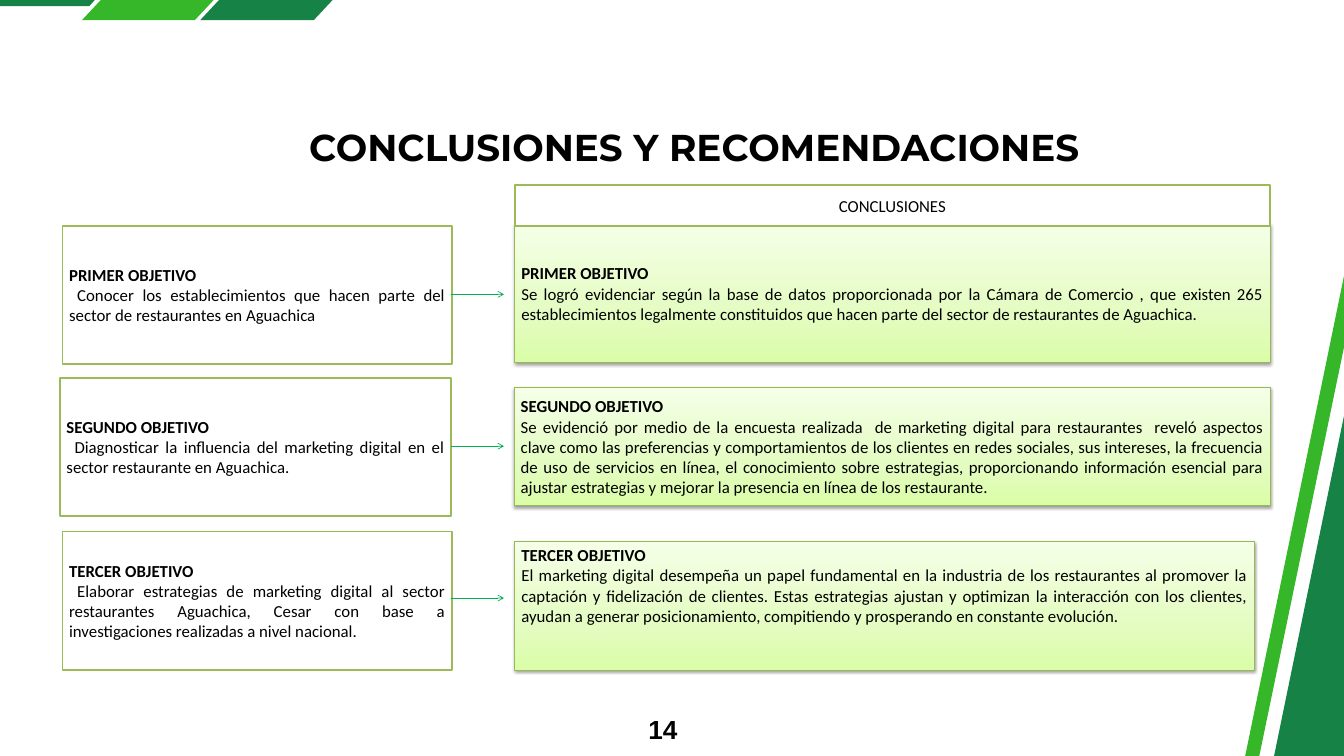
from collections import namedtuple

from lxml.etree import SubElement
from pptx import Presentation
from pptx.dml.color import RGBColor
from pptx.enum.shapes import MSO_CONNECTOR as Connector, MSO_SHAPE as Preset
from pptx.enum.text import MSO_ANCHOR as Anchor, PP_ALIGN as Align
from pptx.oxml.ns import qn
from pptx.util import Emu, Inches, Pt

COLUMNS, ROWS = 20, 11.25
CELL = Inches(1)
Box = namedtuple("Box", "left top width height")

BLACK, WHITE = "000000", "FFFFFF"
DARK, LIGHT, OLIVE, LEAF, ARROW = "168246", "35B729", "9BBB59", "98B955", "00B050"
GRADIENT = [(0, "DAFDA7"), (35, "E4FCC2"), (100, "F5FFE7")]

GOALS = [
    (Box(0.93, 3.36, 5.79, 2.06), "PRIMER OBJETIVO",
     "Conocer los establecimientos que hacen parte del sector de restaurantes en Aguachica"),
    (Box(0.89, 5.62, 5.82, 2.06), "SEGUNDO OBJETIVO",
     "Diagnosticar la influencia del marketing digital en el sector restaurante en Aguachica."),
    (Box(0.93, 7.91, 5.79, 2.06), "TERCER OBJETIVO",
     "Elaborar estrategias de marketing digital al sector restaurantes Aguachica, Cesar con base a "
     "investigaciones realizadas a nivel nacional."),
]
CONCLUSIONS = [
    (Box(7.66, 3.33, 11.24, 2.07), Anchor.MIDDLE, "PRIMER OBJETIVO",
     "Se logró evidenciar según la base de datos proporcionada por la Cámara de Comercio , que existen "
     "265 establecimientos legalmente constituidos que hacen parte del sector de restaurantes de Aguachica."),
    (Box(7.65, 5.77, 11.25, 1.75), Anchor.MIDDLE, "SEGUNDO OBJETIVO",
     "Se evidenció por medio de la encuesta realizada  de marketing digital para restaurantes  reveló aspectos "
     "clave como las preferencias y comportamientos de los clientes en redes sociales, sus intereses, la "
     "frecuencia de uso de servicios en línea, el conocimiento sobre estrategias, proporcionando información "
     "esencial para ajustar estrategias y mejorar la presencia en línea de los restaurante."),
    (Box(7.66, 8.06, 11, 1.91), Anchor.TOP, "TERCER OBJETIVO",
     "El marketing digital desempeña un papel fundamental en la industria de los restaurantes al promover la "
     "captación y fidelización de clientes. Estas estrategias ajustan y optimizan la interacción con los "
     "clientes, ayudan a generar posicionamiento, compitiendo y prosperando en constante evolución."),
]
TOP_BANDS = [
    (DARK, [(0, 0), (1.41, 0), (1.33, 0.09), (0, 0.09)]),
    (LIGHT, [(1.5, 0), (3.18, 0), (2.9, 0.3), (1.22, 0.3)]),
    (DARK, [(3.26, 0), (4.95, 0), (4.67, 0.3), (2.98, 0.3)]),
]
SIDE_BANDS = [
    (DARK, [(18.96, ROWS), (COLUMNS, 6.19), (COLUMNS, ROWS)]),
    (LIGHT, [(18.53, ROWS), (COLUMNS, 4.11), (COLUMNS, 5.17), (18.74, ROWS)]),
]
ARROW_LEFT, ARROW_RIGHT, ARROW_TOP, ARROW_PITCH = 6.71, 7.5, 4.38, 2.26


def color(value):
    return RGBColor.from_string(value)


def cells(*values):
    return [Emu(round(value * CELL)) for value in values]


def write(frame, text, size=18, font="Calibri", bold=False, align=Align.JUSTIFY, indent=0, spacing=None):
    para = frame.paragraphs[0]
    if para.runs:
        para = frame.add_paragraph()
    para.alignment = align
    if spacing:
        para.line_spacing = Pt(spacing)
    if indent:
        para._p.get_or_add_pPr().set("indent", str(Inches(indent)))
    span = para.add_run()
    span.text = text
    span.font.size, span.font.name, span.font.bold = Pt(size), font, bold
    span.font.color.rgb = color(BLACK)


def add_label(page, box, text, **style):
    frame = page.shapes.add_textbox(*cells(*box)).text_frame
    frame.word_wrap = True
    frame.margin_left = frame.margin_right = frame.margin_top = frame.margin_bottom = 0
    write(frame, text, **style)


def add_panel(page, box, line, width, anchor=Anchor.MIDDLE):
    panel = page.shapes.add_shape(Preset.RECTANGLE, *cells(*box))
    panel.shadow.inherit = False
    panel.fill.solid()
    panel.fill.fore_color.rgb = color(WHITE)
    panel.line.color.rgb = color(line)
    panel.line.width = Pt(width)
    panel.text_frame.word_wrap = True
    panel.text_frame.vertical_anchor = anchor
    return panel


def add_glow(panel):
    panel.fill.gradient()
    panel.fill.gradient_angle = 90
    properties = panel._element.spPr
    stops = properties.find(qn("a:gradFill")).find(qn("a:gsLst"))
    for stop in list(stops):
        stops.remove(stop)
    for position, value in GRADIENT:
        stop = SubElement(stops, qn("a:gs"), pos=str(position * 1000))
        SubElement(stop, qn("a:srgbClr"), val=value)
    shadow = SubElement(properties.find(qn("a:effectLst")), qn("a:outerShdw"), blurRad=str(Pt(3.1)),
                        dist=str(Pt(1.6)), dir="5400000", rotWithShape="0")
    shade = SubElement(shadow, qn("a:srgbClr"), val=BLACK)
    SubElement(shade, qn("a:alpha"), val="38000")


def add_bands(page, bands):
    for value, points in bands:
        start, *rest = [cells(*point) for point in points]
        builder = page.shapes.build_freeform(*start)
        builder.add_line_segments(rest, close=True)
        band = builder.convert_to_shape()
        band.shadow.inherit = False
        band.fill.solid()
        band.fill.fore_color.rgb = color(value)
        band.line.fill.background()


def add_conclusion(page, box, anchor, heading, text):
    panel = add_panel(page, box, LEAF, 0.75, anchor)
    add_glow(panel)
    write(panel.text_frame, heading, bold=True)
    write(panel.text_frame, text)


def add_goal(page, box, heading, text):
    frame = add_panel(page, box, OLIVE, 2).text_frame
    write(frame, heading, bold=True)
    write(frame, text, indent=0.12)


def add_arrow(page, height):
    arrow = page.shapes.add_connector(Connector.STRAIGHT, *cells(ARROW_LEFT, height, ARROW_RIGHT, height))
    arrow.line.color.rgb = color(ARROW)
    arrow.line.width = Pt(0.75)
    SubElement(arrow.line._get_or_add_ln(), qn("a:tailEnd"), type="arrow")
    SubElement(arrow._element.spPr, qn("a:effectLst"))


def add_header(page, box, text):
    write(add_panel(page, box, OLIVE, 2).text_frame, text, align=Align.CENTER)


def main():
    deck = Presentation()
    deck.slide_width, deck.slide_height = cells(COLUMNS, ROWS)
    page = deck.slides.add_slide(deck.slide_layouts[6])
    add_bands(page, TOP_BANDS + SIDE_BANDS)
    add_label(page, Box(9.52, 10.54, 0.56, 0.5), "14", size=28, font="Arial", bold=True,
              align=Align.RIGHT, spacing=39.2)
    add_label(page, Box(2, 1.85, 16.66, 0.67), "CONCLUSIONES Y RECOMENDACIONES", size=40,
              font="Montserrat", bold=True, align=Align.CENTER)
    for conclusion in reversed(CONCLUSIONS):
        add_conclusion(page, *conclusion)
    for goal in GOALS:
        add_goal(page, *goal)
    for row in range(len(GOALS)):
        add_arrow(page, ARROW_TOP + row * ARROW_PITCH)
    add_header(page, Box(7.66, 2.76, 11.24, 0.6), "CONCLUSIONES")
    deck.save("out.pptx")


if __name__ == "__main__":
    main()
